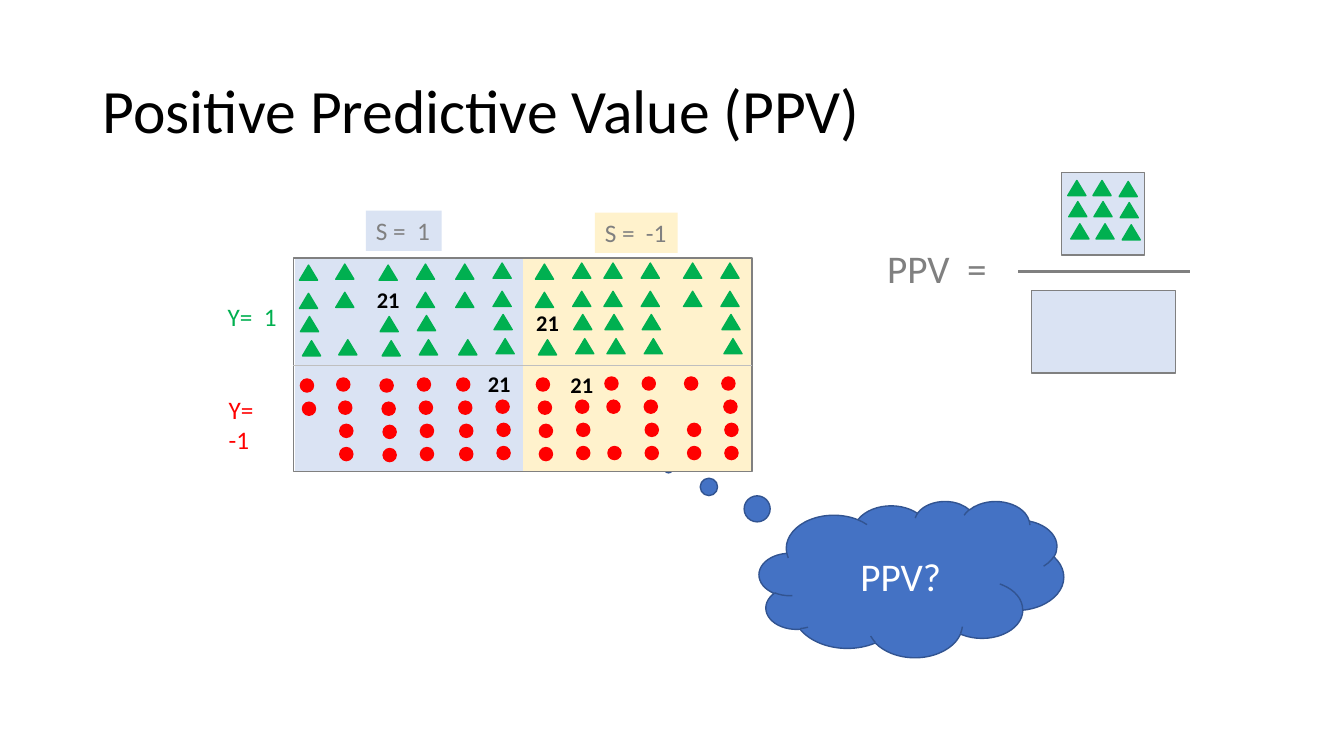
from pptx import Presentation
from pptx.dml.color import RGBColor
from pptx.enum.shapes import MSO_CONNECTOR, MSO_SHAPE
from pptx.enum.text import MSO_ANCHOR, PP_ALIGN
from pptx.oxml.ns import qn
from pptx.util import Pt

PX = 9144

BLACK = RGBColor(0x00, 0x00, 0x00)
WHITE = RGBColor(0xFF, 0xFF, 0xFF)
GRAY = RGBColor(0x80, 0x80, 0x80)
SILVER = RGBColor(0xBF, 0xBF, 0xBF)
PALE_BLUE = RGBColor(0xDA, 0xE3, 0xF3)
CREAM = RGBColor(0xFF, 0xF2, 0xCC)
GREEN = RGBColor(0x00, 0xB0, 0x50)
RED = RGBColor(0xFF, 0x00, 0x00)
BLUE = RGBColor(0x44, 0x72, 0xC4)
NAVY = RGBColor(0x32, 0x54, 0x91)

COLUMNS = [(6, 7), (42, 6), (85, 7), (122, 6), (161, 6), (198, 5),
           (240, 6), (277, 5), (308, 5), (345, 5), (387, 5), (424, 5)]
TRIANGLE_ROWS = [(0, 0, "XXXXXXXXXXXX"), (0, 28, "XX.XXXXXXXXX"),
                 (1, 51, "X.XX.X.XXX.X"), (3, 75, "XXXXXXXXXX.X")]
DOT_ROWS = [(1, 113, "XXXXX.X.XXXX"), (3, 136, "XXXXXXXXXX.X"),
            (4, 159, ".XXXXXXX.XXX"), (4, 182, ".XXXXXXXXXXX")]


def add_figure(shapes, kind, x, y, w, h, fill=None, line=None):
    """Add a preset shape with a flat fill and a thin line."""
    sp = shapes.add_shape(kind, x * PX, y * PX, w * PX, h * PX)
    sp.shadow.inherit = False
    if fill is None:
        sp.fill.background()
    else:
        sp.fill.solid()
        sp.fill.fore_color.rgb = fill
    if line is None:
        sp.line.fill.background()
    else:
        sp.line.color.rgb = line
        sp.line.width = Pt(1)
    return sp


def add_line(shapes, x1, y1, x2, y2, color, width):
    """Add a straight line without a shadow."""
    cxn = shapes.add_connector(MSO_CONNECTOR.STRAIGHT, x1 * PX, y1 * PX, x2 * PX, y2 * PX)
    cxn.line.color.rgb = color
    cxn.line.width = Pt(width)
    effects = cxn._element.spPr
    effects.append(effects.makeelement(qn("a:effectLst"), {}))
    return cxn


def write(sp, text, size, color, bold=False, wrap=False,
          anchor=MSO_ANCHOR.TOP, align=PP_ALIGN.LEFT):
    """Write one run into a shape and return its paragraph."""
    tf = sp.text_frame
    tf.word_wrap = wrap
    tf.vertical_anchor = anchor
    p = tf.paragraphs[0]
    p.alignment = align
    r = p.add_run()
    r.text = text
    r.font.name = "Calibri"
    r.font.size = Pt(size)
    r.font.bold = bold
    r.font.color.rgb = color
    return p


def add_label(shapes, x, y, w, h, text, size, color, bold=False):
    """Add an unwrapped text box."""
    sp = shapes.add_textbox(x * PX, y * PX, w * PX, h * PX)
    write(sp, text, size, color, bold)


def add_triangle(shapes, x, y):
    """Add one green triangle."""
    add_figure(shapes, MSO_SHAPE.ISOSCELES_TRIANGLE, x, y, 18, 15, GREEN, GREEN)


def add_dot(shapes, x, y):
    """Add one red dot."""
    add_figure(shapes, MSO_SHAPE.OVAL, x, y, 13, 13, RED, RED)


def add_title(s, x, y, w, h):
    """Add the slide title."""
    sp = s.shapes.add_textbox(x * PX, y * PX, w * PX, h * PX)
    p = write(sp, "Positive Predictive Value (PPV)", 44, BLACK, wrap=True,
              anchor=MSO_ANCHOR.MIDDLE)
    p.line_spacing = 0.9


def add_cloud(s, x, y, w, h):
    """Add the thought cloud that points at the population."""
    sp = add_figure(s.shapes, MSO_SHAPE.CLOUD_CALLOUT, x, y, w, h, BLUE, NAVY)
    sp.adjustments[0] = -0.798
    sp.adjustments[1] = -0.708
    write(sp, "PPV?", 28, WHITE, wrap=True, anchor=MSO_ANCHOR.MIDDLE, align=PP_ALIGN.CENTER)


def add_population(s, x, y, w, h):
    """Add the two groups with their positive and negative members."""
    shapes = s.shapes.add_group_shape().shapes
    for dx, color in [(2, PALE_BLUE), (228, CREAM)]:
        add_figure(shapes, MSO_SHAPE.RECTANGLE, x + dx, y, 226, h, color, color)
    frame = add_figure(shapes, MSO_SHAPE.RECTANGLE, x, y, w, h, line=GRAY)
    divider = add_line(shapes, x, y + h // 2, x + w, y + h // 2, SILVER, 0.5)
    divider.begin_connect(frame, 1)
    divider.end_connect(frame, 3)

    for add_mark, rows in [(add_triangle, TRIANGLE_ROWS), (add_dot, DOT_ROWS)]:
        for dx, dy, members in rows:
            for (left, top), member in zip(COLUMNS, members):
                if member == "X":
                    add_mark(shapes, x + left + dx, y + top + dy)

    for dx, dy, text, color in [(-75, 38, "Y=  1", GREEN), (-74, 130, "Y= -1", RED)]:
        add_label(shapes, x + dx, y + dy, 70, 40, text, 18, color)
    for dx, dy, width, text, fill in [(72, -47, 75, "S =  1", PALE_BLUE),
                                      (299, -45, 82, "S =  -1", CREAM)]:
        sp = add_figure(shapes, MSO_SHAPE.RECTANGLE, x + dx, y + dy, width, 40, fill)
        write(sp, text, 18, GRAY)
    for dx, dy in [(73, 23), (231, 46), (183, 106), (265, 107)]:
        add_label(shapes, x + dx, y + dy, 43, 37, "21", 16, BLACK, bold=True)


def add_formula(s, x, y, w, h):
    """Add the PPV fraction: true positives over predicted positives."""
    add_label(s.shapes, x, y + 66, 120, 57, "PPV  =", 28, GRAY)
    top = s.shapes.add_group_shape().shapes
    add_figure(top, MSO_SHAPE.RECTANGLE, x + 183, y, 82, 82, PALE_BLUE, GRAY)
    for dx, drop in [(189, 0), (214, 0), (240, 1)]:
        for shift, dy in [(0, 8), (1, 29), (3, 51)]:
            add_triangle(top, x + dx + shift, y + dy + drop)
    add_line(s.shapes, x + 140, y + 98, x + w, y + 98, GRAY, 2.25)
    add_figure(s.shapes, MSO_SHAPE.RECTANGLE, x + 153, y + h - 82, 143, 82, PALE_BLUE, GRAY)


def main():
    """Build the slide and save it."""
    prs = Presentation()
    prs.slide_width = 1333 * PX
    prs.slide_height = 750 * PX
    s = prs.slides.add_slide(prs.slide_layouts[6])
    add_title(s, 92, 40, 1150, 145)
    add_cloud(s, 753, 497, 302, 155)
    add_population(s, 291, 256, 455, 212)
    add_formula(s, 870, 171, 310, 199)
    prs.save("out.pptx")


if __name__ == "__main__":
    main()
